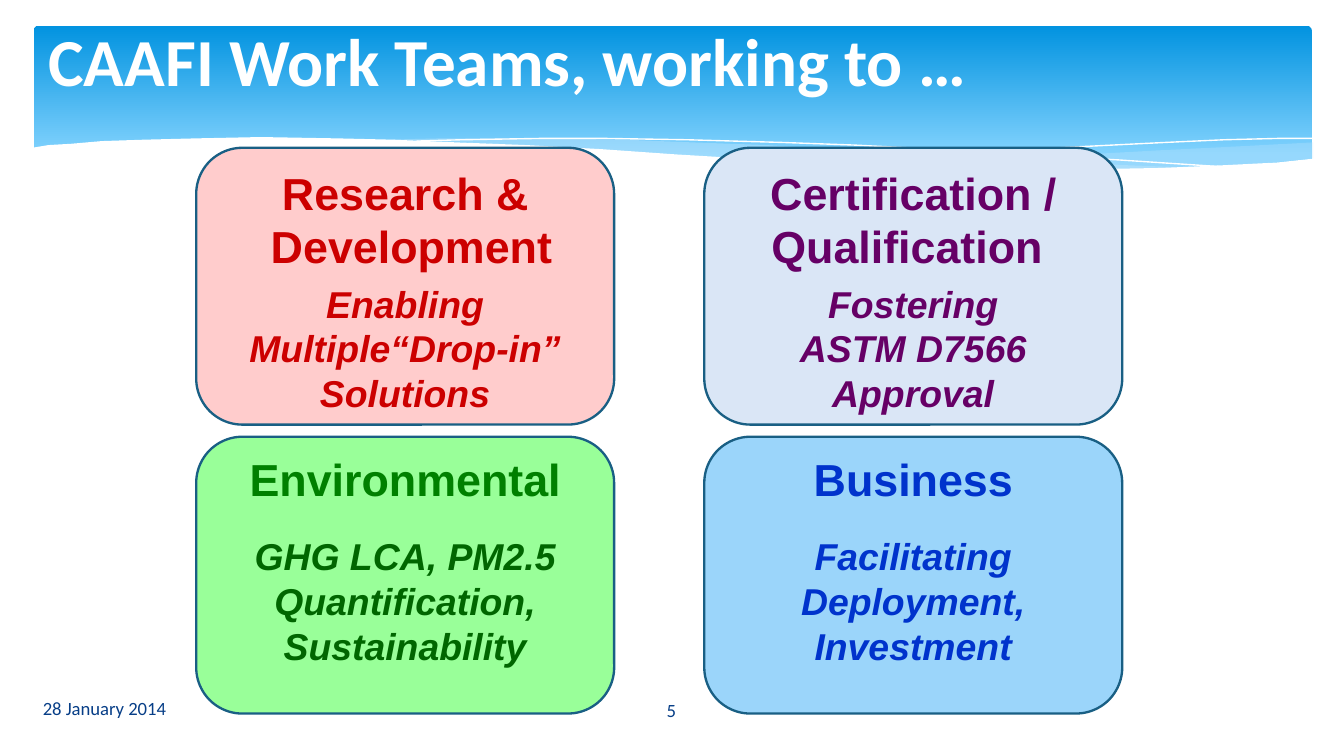
import dataclasses

import pptx
import pptx.dml.color
import pptx.enum.shapes
import pptx.enum.text
import pptx.oxml.ns
import pptx.util
from lxml import etree
from pptx.util import Inches

Align = pptx.enum.text.PP_ALIGN
Anchor = pptx.enum.text.MSO_ANCHOR


@dataclasses.dataclass(frozen=True)
class Theme:
    heading_font: str = "Calibri"
    team_font: str = "Arial"
    title_size: int = 36
    team_size: int = 24
    goal_size: int = 20
    footer_size: int = 10
    white: str = "FFFFFF"
    footer: str = "073E87"
    outline: str = "195F84"
    band_top: str = "0293E0"
    band_bottom: str = "83D3FE"
    wave: str = "C6E7FC"


@dataclasses.dataclass(frozen=True)
class Team:
    name: tuple
    goal: str
    goal_width: float
    fill: str
    name_color: str
    goal_color: str


THEME = Theme()
SLIDE_WIDTH = Inches(10)
SLIDE_HEIGHT = SLIDE_WIDTH * 9 // 16
CARD_LEFTS, CARD_TOPS = (1.46, 5.24), (1.1, 3.25)
CARD_WIDTH, CARD_HEIGHT = 3.11, 2.06
NAME_TOPS, NAME_HEIGHTS, GOAL_TOPS = (1.18, 3.31), (0.91, 0.5), (2.04, 3.92)

TEAM_ROWS = (
    (
        Team(("Research &", " Development"), "Enabling Multiple“Drop-in” Solutions",
             2.94, "FFCCCC", "CC0000", "CC0000"),
        Team(("Certification / Qualification ",), "Fostering ASTM D7566 Approval",
             2.04, "DAE6F6", "660066", "660066"),
    ),
    (
        Team(("Environmental",), "GHG LCA, PM2.5 Quantification, Sustainability",
             2.58, "99FF99", "008000", "006600"),
        Team(("Business",), "Facilitating Deployment, Investment",
             2.65, "9BD5FA", "0033CC", "0033CC"),
    ),
)

RIGHT_WAVE = (
    (9.77, 1.06), (9.21, 1.09), (8.61, 1.12), (7.54, 1.18), (6.62, 1.23),
    (7.05, 1.24), (7.45, 1.25), (8.04, 1.26), (8.45, 1.26), (8.9, 1.24),
    (9.36, 1.22), (9.77, 1.18),
)
MIDDLE_WAVE = (
    (8.93, 1.25), (8.38, 1.23), (7.42, 1.18), (6.3, 1.12), (5.7, 1.08),
    (5.15, 1.06), (4.65, 1.04), (4, 1.03), (3.29, 1.03), (2.87, 1.04),
    (3.43, 1.06), (4.05, 1.09), (4.5, 1.12), (5.3, 1.17), (6.02, 1.2),
    (6.66, 1.23), (7.23, 1.25), (7.85, 1.26), (8.49, 1.26), (8.93, 1.25),
)
FALLING_LINE = (
    (3.1, 1.05), (3.44, 1.04), (4.02, 1.03), (4.51, 1.03), (5.11, 1.04),
    (5.82, 1.06), (6.36, 1.08), (6.96, 1.11), (7.61, 1.15), (8.32, 1.19),
    (9.08, 1.24),
)
RISING_LINE = (
    (6.14, 1.21), (6.53, 1.18), (6.96, 1.15), (7.48, 1.12), (8.07, 1.09),
    (8.67, 1.06), (9.11, 1.04), (9.51, 1.03), (9.76, 1.03),
)
WHITE_WAVE = (
    (9.78, 1.18), (9.5, 1.21), (9.1, 1.23), (8.64, 1.25), (8.09, 1.26),
    (7.45, 1.25), (6.89, 1.23), (6.26, 1.21), (5.55, 1.18), (5.04, 1.15),
    (4.47, 1.11), (3.92, 1.08), (3.4, 1.06), (2.93, 1.04), (2.51, 1.03),
    (1.94, 1.02), (1.46, 1.03), (1.07, 1.04), (0.76, 1.05), (0.53, 1.07),
    (0.36, 1.08), (0.24, 1.1), (0.24, 1.39), (9.78, 1.39),
)


def rgb(color):
    return pptx.dml.color.RGBColor.from_string(color)


def write_text(frame, lines, *, font, size, color, bold=False, italic=False,
               align=Align.LEFT, anchor=Anchor.TOP, line_spacing=None):
    frame.word_wrap = True
    frame.auto_size = pptx.enum.text.MSO_AUTO_SIZE.NONE
    frame.vertical_anchor = anchor
    frame.text = "\n".join(lines)
    for paragraph in frame.paragraphs:
        paragraph.alignment = align
        if line_spacing:
            paragraph.line_spacing = pptx.util.Pt(line_spacing)
        for run in paragraph.runs:
            run.font.name = font
            run.font.size = pptx.util.Pt(size)
            run.font.bold = bold
            run.font.italic = italic
            run.font.color.rgb = rgb(color)


def add_text(slide, left, top, width, height, lines, **text_format):
    box = slide.shapes.add_textbox(*map(Inches, (left, top, width, height)))
    write_text(box.text_frame, lines, **text_format)


def add_round_box(slide, left, top, width, height):
    shape = slide.shapes.add_shape(
        pptx.enum.shapes.MSO_SHAPE.ROUNDED_RECTANGLE,
        *map(Inches, (left, top, width, height)))
    shape.shadow.inherit = False
    return shape


def add_wave(slide, points, *, fill=None, opacity=100, line=None):
    """Draw a filled area, or an open hairline when only line is given."""
    start, *rest = [(Inches(x), Inches(y)) for x, y in points]
    builder = slide.shapes.build_freeform(*start)
    builder.add_line_segments(rest, close=fill is not None)
    shape = builder.convert_to_shape()
    shape.shadow.inherit = False
    if fill:
        shape.fill.solid()
        shape.fill.fore_color.rgb = rgb(fill)
        shape.line.fill.background()
        if opacity < 100:
            color = shape.element.spPr.find(".//" + pptx.oxml.ns.qn("a:srgbClr"))
            etree.SubElement(color, pptx.oxml.ns.qn("a:alpha"), val=str(opacity * 1000))
    else:
        shape.fill.background()
        shape.line.color.rgb = rgb(line)
        shape.line.width = pptx.util.Pt(0)


def add_banner(slide):
    band = add_round_box(slide, 0.25, 0.19, 9.51, 1.08)
    band.adjustments[0] = 0.034
    band.line.fill.background()
    band.fill.gradient()
    band.fill.gradient_angle = 270
    stops = zip(band.fill.gradient_stops, (0, 0.9), (THEME.band_top, THEME.band_bottom))
    for stop, position, color in stops:
        stop.position = position
        stop.color.rgb = rgb(color)
    add_wave(slide, RIGHT_WAVE, fill=THEME.wave, opacity=29)
    add_wave(slide, MIDDLE_WAVE, fill=THEME.wave, opacity=40)
    add_wave(slide, FALLING_LINE, line=THEME.white)
    add_wave(slide, RISING_LINE, line=THEME.white)
    add_wave(slide, WHITE_WAVE, fill=THEME.white)


def place_title(slide, text):
    title = slide.shapes.title
    title.left, title.top, title.width, title.height = map(Inches, (0.26, 0.18, 9, 0.68))
    write_text(title.text_frame, [text], font=THEME.heading_font, size=THEME.title_size,
               color=THEME.white, bold=True, anchor=Anchor.MIDDLE, line_spacing=32)
    # Bring the title in front of the banner.
    title.element.getparent().append(title.element)


def add_team(slide, team, left, top, name_top, name_height, goal_top):
    card = add_round_box(slide, left, top, CARD_WIDTH, CARD_HEIGHT)
    card.fill.solid()
    card.fill.fore_color.rgb = rgb(team.fill)
    card.line.color.rgb = rgb(THEME.outline)
    card.line.width = pptx.util.Pt(1.25)
    shared = {"font": THEME.team_font, "bold": True, "align": Align.CENTER}
    add_text(slide, left, name_top, CARD_WIDTH, name_height, team.name,
             size=THEME.team_size, color=team.name_color, **shared)
    goal_left = left + (CARD_WIDTH - team.goal_width) / 2
    add_text(slide, goal_left, goal_top, team.goal_width, 1.11, [team.goal],
             size=THEME.goal_size, color=team.goal_color, italic=True, **shared)


def add_footer(slide):
    shared = {"font": THEME.heading_font, "size": THEME.footer_size,
              "color": THEME.footer, "anchor": Anchor.MIDDLE}
    add_text(slide, 0.22, 5.12, 4.14, 0.3, ["28 January 2014"], **shared)
    add_text(slide, 4.36, 5.13, 1.27, 0.3, ["5"], align=Align.CENTER, **shared)


def main():
    presentation = pptx.Presentation()
    presentation.slide_width, presentation.slide_height = SLIDE_WIDTH, SLIDE_HEIGHT
    slide = presentation.slides.add_slide(presentation.slide_layouts[5])
    add_banner(slide)
    rows = zip(TEAM_ROWS, CARD_TOPS, NAME_TOPS, NAME_HEIGHTS, GOAL_TOPS)
    for teams, *row_layout in rows:
        for team, left in zip(teams, CARD_LEFTS):
            add_team(slide, team, left, *row_layout)
    place_title(slide, "CAAFI Work Teams, working to …")
    add_footer(slide)
    presentation.save("out.pptx")


if __name__ == "__main__":
    main()
